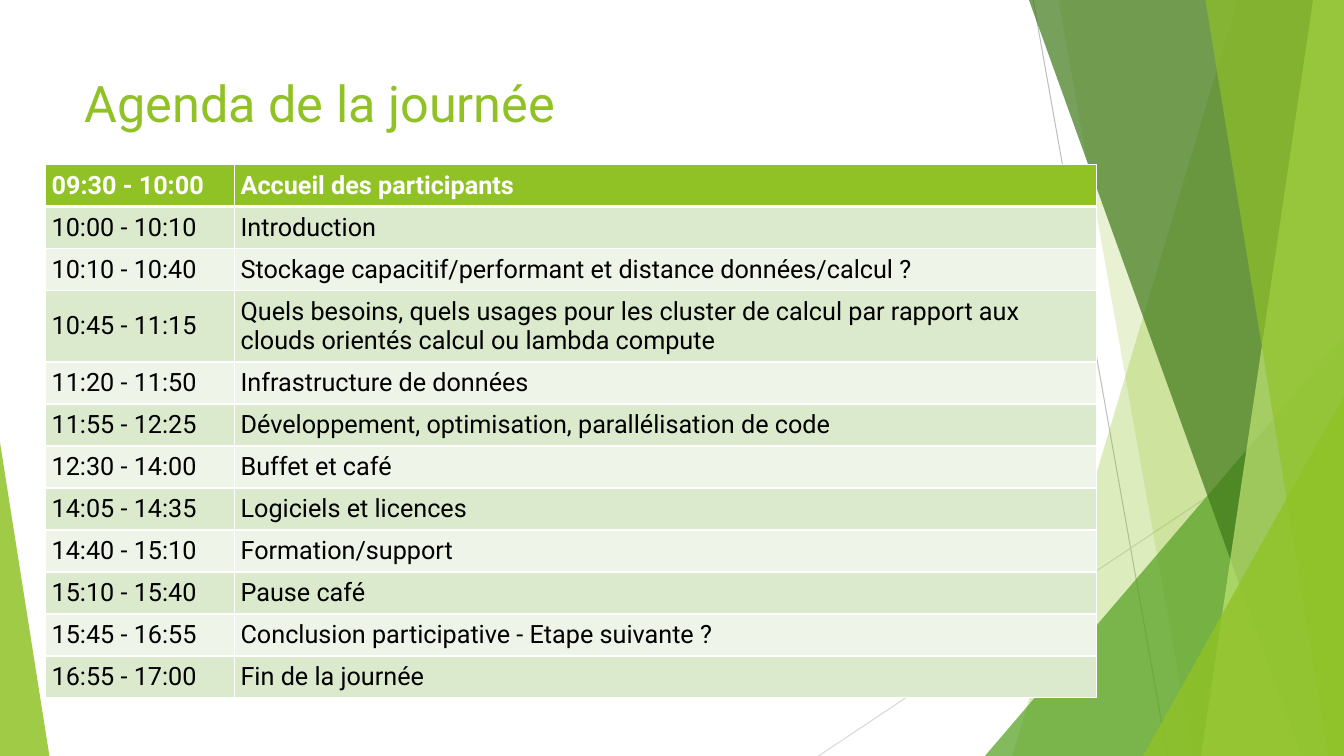
import pptx
import pptx.util
import pptx.dml.color
import pptx.enum.shapes
import pptx.enum.text
import pptx.oxml.ns
import lxml.etree

Pt = pptx.util.Pt
RGBColor = pptx.dml.color.RGBColor
qn = pptx.oxml.ns.qn

LIME = RGBColor(0x90, 0xC2, 0x26)
PALE_LIME = RGBColor(0xC0, 0xE4, 0x74)
GREEN = RGBColor(0x54, 0xA0, 0x21)
DARK_GREEN = RGBColor(0x3F, 0x78, 0x19)
GRAY = RGBColor(0xBF, 0xBF, 0xBF)
LIGHT_GRAY = RGBColor(0xD9, 0xD9, 0xD9)
BAND_DARK = RGBColor(0xDB, 0xE9, 0xCD)
BAND_LIGHT = RGBColor(0xEE, 0xF4, 0xE8)
WHITE = RGBColor(0xFF, 0xFF, 0xFF)
BLACK = RGBColor(0, 0, 0)

WIDTH, HEIGHT = 960, 540
ROW_HEIGHT, TALL_ROW_HEIGHT = 30, 51

AGENDA = [
    ("09:30 - 10:00", "Accueil des participants"),
    ("10:00 - 10:10", "Introduction"),
    ("10:10 - 10:40", "Stockage capacitif/performant et distance données/calcul ?"),
    ("10:45 - 11:15", "Quels besoins, quels usages pour les cluster de calcul par rapport aux "
                      "clouds orientés calcul ou lambda compute"),
    ("11:20 - 11:50", "Infrastructure de données"),
    ("11:55 - 12:25", "Développement, optimisation, parallélisation de code"),
    ("12:30 - 14:00", "Buffet et café"),
    ("14:05 - 14:35", "Logiciels et licences"),
    ("14:40 - 15:10", "Formation/support"),
    ("15:10 - 15:40", "Pause café"),
    ("15:45 - 16:55", "Conclusion participative - Etape suivante ?"),
    ("16:55 - 17:00", "Fin de la journée"),
]
TALL_ROW = 3


class SlideBuilder:
    font_name = "Roboto"
    title_size = 36
    table_size = 18
    cell_margin = 4.3

    def __init__(self, page):
        self.page = page

    def style_font(self, paragraph, size, color, bold=False):
        paragraph.font.name = self.font_name
        paragraph.font.size = Pt(size)
        paragraph.font.color.rgb = color
        paragraph.font.bold = bold

    def line(self, start, end, color):
        connector = self.page.shapes.add_connector(
            pptx.enum.shapes.MSO_CONNECTOR.STRAIGHT,
            *(Pt(value) for value in start + end))
        connector.line.color.rgb = color
        connector.line.width = Pt(0.75)
        lxml.etree.SubElement(connector.element.spPr, qn("a:effectLst"))

    def paint(self, shape, color, opacity):
        shape.shadow.inherit = False
        shape.line.fill.background()
        shape.fill.solid()
        shape.fill.fore_color.rgb = color
        solid = shape.element.spPr.find(qn("a:solidFill"))
        alpha = lxml.etree.SubElement(solid[0], qn("a:alpha"))
        alpha.set("val", str(opacity * 1000))

    def right_panel(self, top_left, bottom_left, color, opacity):
        builder = self.page.shapes.build_freeform(Pt(top_left), 0, scale=1.0)
        corners = [(WIDTH, 0), (WIDTH, HEIGHT), (bottom_left, HEIGHT)]
        builder.add_line_segments([(Pt(x), Pt(y)) for x, y in corners], close=True)
        self.paint(builder.convert_to_shape(), color, opacity)

    def bottom_triangle(self, left, top, width, apex, color, opacity):
        triangle = self.page.shapes.add_shape(
            pptx.enum.shapes.MSO_SHAPE.ISOSCELES_TRIANGLE,
            Pt(left), Pt(top), Pt(width), Pt(HEIGHT - top))
        triangle.adjustments[0] = apex
        self.paint(triangle, color, opacity)

    def title(self, text, left, top, width, height):
        box = self.page.shapes.title
        box.left, box.top, box.width, box.height = map(Pt, (left, top, width, height))
        box.text_frame.text = text
        box.text_frame.vertical_anchor = pptx.enum.text.MSO_ANCHOR.TOP
        paragraph = box.text_frame.paragraphs[0]
        paragraph.alignment = pptx.enum.text.PP_ALIGN.LEFT
        self.style_font(paragraph, self.title_size, LIME)

    def cell_borders(self, cell, bottom_width, top_width):
        properties = cell._tc.get_or_add_tcPr()
        widths = {"a:lnL": 1, "a:lnR": 1, "a:lnT": top_width, "a:lnB": bottom_width}
        for index, (side, width) in enumerate(widths.items()):
            border = lxml.etree.Element(qn(side), w=str(Pt(width)))
            solid = lxml.etree.SubElement(border, qn("a:solidFill"))
            lxml.etree.SubElement(solid, qn("a:srgbClr"), val=str(WHITE))
            properties.insert(index, border)

    def cell(self, cell, text, row):
        header = row == 0
        cell.text = text
        cell.vertical_anchor = pptx.enum.text.MSO_ANCHOR.MIDDLE
        cell.margin_left = cell.margin_right = Pt(self.cell_margin)
        cell.margin_top = cell.margin_bottom = Pt(self.cell_margin)
        cell.fill.solid()
        band = BAND_DARK if row % 2 else BAND_LIGHT
        cell.fill.fore_color.rgb = LIME if header else band
        self.cell_borders(cell, 3 if header else 1, 3 if row == 1 else 1)
        self.style_font(cell.text_frame.paragraphs[0], self.table_size,
                        WHITE if header else BLACK, header)

    def table(self, rows, left, top, column_widths, row_heights):
        table = self.page.shapes.add_table(
            len(rows), len(column_widths), Pt(left), Pt(top),
            Pt(sum(column_widths)), Pt(sum(row_heights))).table
        table.horz_banding = False
        for column, width in zip(table.columns, column_widths):
            column.width = Pt(width)
        for row, (texts, height) in enumerate(zip(rows, row_heights)):
            table.rows[row].height = Pt(height)
            for column, text in enumerate(texts):
                self.cell(table.cell(row, column), text, row)


def main():
    deck = pptx.Presentation()
    deck.slide_width, deck.slide_height = Pt(WIDTH), Pt(HEIGHT)
    slide = SlideBuilder(deck.slides.add_slide(deck.slide_layouts[5]))

    slide.line((738, 0), (834, HEIGHT), GRAY)
    slide.line((WIDTH, 290), (584.6, HEIGHT), LIGHT_GRAY)
    slide.right_panel(884, 723, LIME, 30)
    slide.right_panel(756, 852, LIME, 20)
    slide.bottom_triangle(703.5, 240, 256.5, 1, GREEN, 72)
    slide.right_panel(735, 929.5, DARK_GREEN, 70)
    slide.right_panel(938, 858, PALE_LIME, 70)
    slide.right_panel(861, 949, LIME, 65)
    slide.bottom_triangle(816.5, 283, 143.5, 1, LIME, 80)
    slide.bottom_triangle(0, 316, 35.3, 0, LIME, 85)

    slide.title("Agenda de la journée", 53.3, 48, 677, 104)
    heights = [TALL_ROW_HEIGHT if row == TALL_ROW else ROW_HEIGHT
               for row in range(len(AGENDA))]
    slide.table(AGENDA, 32.6, 117.6, (135, 615.5), heights)
    deck.save("out.pptx")


if __name__ == "__main__":
    main()
